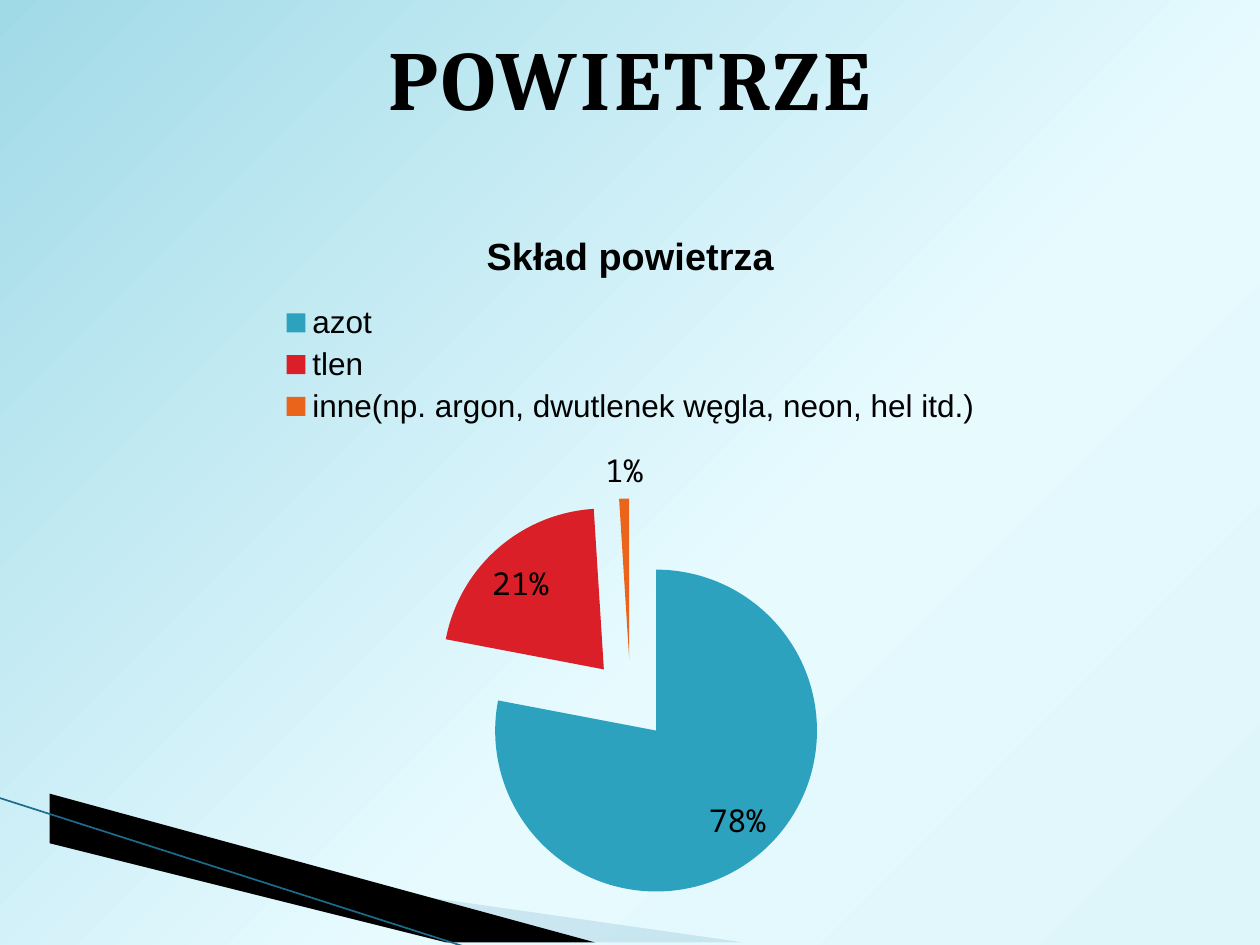
from dataclasses import dataclass

from pptx import Presentation
from pptx.chart.data import CategoryChartData
from pptx.dml.color import RGBColor
from pptx.enum.chart import XL_CHART_TYPE as ChartType
from pptx.enum.chart import XL_LABEL_POSITION as LabelPosition
from pptx.enum.chart import XL_LEGEND_POSITION as LegendPosition
from pptx.enum.shapes import MSO_CONNECTOR as Connector
from pptx.enum.text import MSO_ANCHOR as Anchor
from pptx.enum.text import PP_ALIGN as Align
from pptx.oxml import parse_xml
from pptx.oxml.ns import nsdecls, qn
from pptx.util import Cm, Pt


@dataclass
class Wedge:
    points: list[tuple[float, float]]
    color: str
    opacity: int = 100


@dataclass
class Component:
    name: str
    percent: int
    color: str


WEDGES = [
    Wedge([(1.4, 16.54), (15.11, 19.08), (11.58, 19.08), (1.4, 16.51)], "A0CBDC", 40),
    Wedge([(1.35, 16.48), (11.61, 19.08), (9.45, 19.1), (1.37, 16.51)], "000000"),
]
COMPONENTS = [
    Component("azot", 78, "2DA2BF"),
    Component("tlen", 21, "DA1F28"),
    Component("inne(np. argon, dwutlenek węgla, neon, hel itd.)", 1, "EB641B"),
]
BACKGROUND_STOPS = [(0, "DEF5FA"), (40, "E7FBFF"), (100, "A1DAE7")]
CHART_TITLE = "Skład powietrza"


def rgb(color: str) -> RGBColor:
    return RGBColor.from_string(color)


def set_font(font, name: str, size: float, bold: bool = False) -> None:
    font.name = name
    font.size = Pt(size)
    font.bold = bold
    font.color.rgb = rgb("000000")


def paint_background(slide) -> None:
    slide.background.fill.gradient()
    gradient = slide.element.find(f".//{qn('a:gradFill')}")
    stops = "".join(
        f'<a:gs pos="{position * 1000}"><a:srgbClr val="{color}"/></a:gs>'
        for position, color in BACKGROUND_STOPS
    )
    gradient.getparent().replace(gradient, parse_xml(
        f'<a:gradFill {nsdecls("a")} rotWithShape="1"><a:gsLst>{stops}</a:gsLst>'
        '<a:path path="circle"><a:fillToRect l="100000" t="100000"/></a:path></a:gradFill>'
    ))


def draw_wedge(slide, wedge: Wedge) -> None:
    start, *rest = wedge.points
    builder = slide.shapes.build_freeform(*start, scale=Cm(1))
    builder.add_line_segments(rest, close=True)
    shape = builder.convert_to_shape()
    shape.shadow.inherit = False
    shape.fill.solid()
    shape.fill.fore_color.rgb = rgb(wedge.color)
    shape.line.fill.background()
    if wedge.opacity < 100:
        color = shape.element.spPr.find(f"{qn('a:solidFill')}/{qn('a:srgbClr')}")
        color.append(parse_xml(f'<a:alpha {nsdecls("a")} val="{wedge.opacity * 1000}"/>'))


def draw_edge(slide) -> None:
    edge = slide.shapes.add_connector(
        Connector.STRAIGHT, Cm(-0.03), Cm(16.08), Cm(9.42), Cm(19.1)
    )
    edge.line.color.rgb = rgb("1C6C8C")
    edge.line.width = Pt(0.95)
    edge.element.spPr.append(parse_xml(f'<a:effectLst {nsdecls("a")}/>'))


def draw_chart(slide) -> None:
    data = CategoryChartData()
    data.categories = [component.name for component in COMPONENTS]
    data.add_series(CHART_TITLE, [component.percent for component in COMPONENTS])
    chart = slide.shapes.add_chart(
        ChartType.PIE, Cm(0.71), Cm(4.11), Cm(24), Cm(14.4), data
    ).chart
    set_font(chart.font, "Noto Sans Mono", 18)

    chart.has_title = True
    chart.chart_title.include_in_layout = False
    chart.chart_title.text_frame.text = CHART_TITLE
    set_font(chart.chart_title.text_frame.paragraphs[0].font, "Arial", 21.6, True)

    chart.has_legend = True
    chart.legend.position = LegendPosition.TOP
    chart.legend.include_in_layout = False
    set_font(chart.legend.font, "Arial", 18)

    plot = chart.plots[0]
    plot.vary_by_categories = True
    series = plot.series[0]
    for index, component in enumerate(COMPONENTS):
        fill = series.points[index].format.fill
        fill.solid()
        fill.fore_color.rgb = rgb(component.color)
    first_point = series._element.find(qn("c:dPt"))
    first_point.addprevious(parse_xml(f'<c:explosion {nsdecls("c")} val="25"/>'))

    plot.has_data_labels = True
    labels = plot.data_labels
    labels.show_percentage = True
    labels.show_value = False
    labels.number_format = "0%"
    labels.number_format_is_linked = False
    labels.position = LabelPosition.BEST_FIT
    set_font(labels.font, "Noto Sans Mono", 18)


def write_title(slide) -> None:
    title = slide.shapes.title
    title.left, title.top, title.width, title.height = Cm(0), Cm(0), Cm(25.4), Cm(3.12)
    title.text_frame.text = "POWIETRZE"
    title.text_frame.vertical_anchor = Anchor.MIDDLE
    paragraph = title.text_frame.paragraphs[0]
    paragraph.alignment = Align.CENTER
    set_font(paragraph.font, "Cambria", 48, True)
    properties = paragraph.runs[0]._r.get_or_add_rPr()
    properties.set("spc", "200")
    properties.insert(0, parse_xml(
        f'<a:ln {nsdecls("a")} w="{Pt(0.83)}"><a:solidFill>'
        '<a:srgbClr val="7D7D7D"/></a:solidFill></a:ln>'
    ))
    slide.shapes.element.append(title.element)


def main() -> None:
    presentation = Presentation()
    presentation.slide_width, presentation.slide_height = Cm(25.4), Cm(19.05)
    slide = presentation.slides.add_slide(presentation.slide_layouts[5])
    paint_background(slide)
    for wedge in WEDGES:
        draw_wedge(slide, wedge)
    draw_edge(slide)
    draw_chart(slide)
    write_title(slide)
    presentation.save("out.pptx")


if __name__ == "__main__":
    main()
